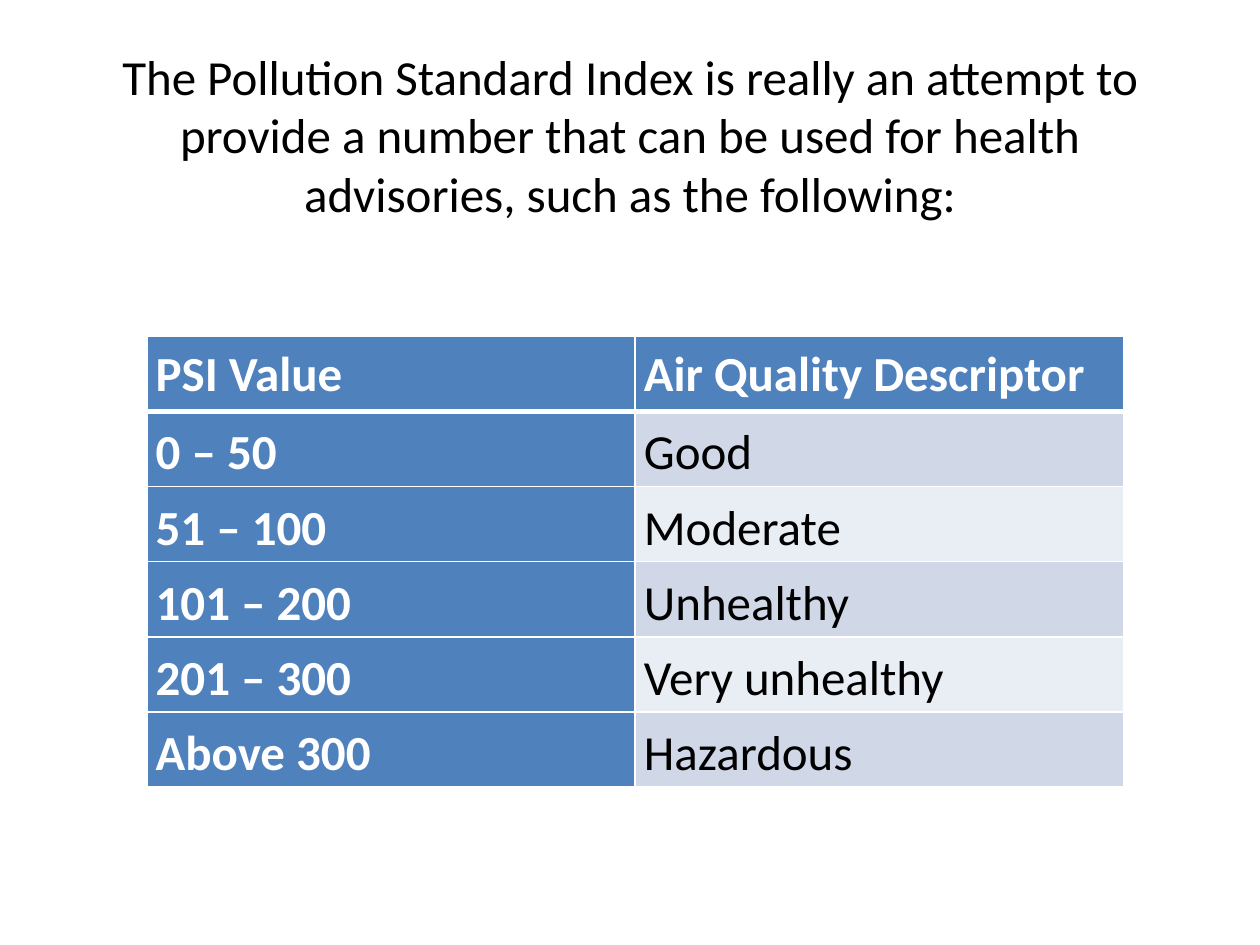
import pptx
import pptx.util
import pptx.dml.color
import pptx.enum.text
import pptx.oxml.ns
from lxml import etree

Pt = pptx.util.Pt
Align = pptx.enum.text.PP_ALIGN
Anchor = pptx.enum.text.MSO_ANCHOR

title = ("The Pollution Standard Index is really an attempt to provide a number "
         "that can be used for health advisories, such as the following:")
rows = [
    ("PSI Value", "Air Quality Descriptor"),
    ("0 – 50", "Good"),
    ("51 – 100", "Moderate"),
    ("101 – 200", "Unhealthy"),
    ("201 – 300", "Very unhealthy"),
    ("Above 300", "Hazardous"),
]
hues = {"head": "4F81BD", "odd": "D0D8E8", "even": "E9EDF4",
        "light": "FFFFFF", "dark": "000000"}
area = {"left": 36, "top": 48, "width": 648, "height": 90}
inset = {"margin_left": 5, "margin_right": 5, "margin_top": 0, "margin_bottom": 0}
left, top, wide, high = 84, 192, 558, 43


def paint(name):
    return pptx.dml.color.RGBColor.from_string(hues[name])


def apply(item, form):
    for key, value in form.items():
        setattr(item, key, value)


def write(frame, text, hue, bold, form):
    frame.text = text
    para = frame.paragraphs[0]
    apply(para, form)
    font = para.runs[0].font
    apply(font, {"name": "Calibri", "size": Pt(28), "bold": bold})
    font.color.rgb = paint(hue)


def edge(cell, side, width):
    qn = pptx.oxml.ns.qn
    props = cell._tc.get_or_add_tcPr()
    line = etree.SubElement(props, qn("a:ln" + side), w=str(Pt(width)))
    fill = etree.SubElement(line, qn("a:solidFill"))
    etree.SubElement(fill, qn("a:srgbClr"), val=hues["light"])


deck = pptx.Presentation()
apply(deck, {"slide_width": Pt(720), "slide_height": Pt(540)})
slide = deck.slides.add_slide(deck.slide_layouts[5])

head = slide.shapes.title
apply(head, {key: Pt(size) for key, size in area.items()})
apply(head.text_frame, {"word_wrap": True, "vertical_anchor": Anchor.MIDDLE,
                        "margin_bottom": Pt(36),
                        "auto_size": pptx.enum.text.MSO_AUTO_SIZE.NONE})
write(head.text_frame, title, "dark", False, {"alignment": Align.CENTER})

count = len(rows)
table = slide.shapes.add_table(count, 2, Pt(left), Pt(top),
                               Pt(wide), Pt(high * count)).table
for col in table.columns:
    col.width = Pt(wide / 2)
for r, row in enumerate(rows):
    table.rows[r].height = Pt(high)
    for c, text in enumerate(row):
        cell = table.cell(r, c)
        strong = r == 0 or c == 0
        apply(cell, {key: Pt(size) for key, size in inset.items()})
        cell.vertical_anchor = Anchor.MIDDLE if r else Anchor.TOP
        for side in "LRTB":
            thick = (r, side) in ((0, "B"), (1, "T"))
            edge(cell, side, 3 if thick else 1)
        cell.fill.solid()
        band = "odd" if r % 2 else "even"
        cell.fill.fore_color.rgb = paint("head" if strong else band)
        write(cell.text_frame, text, "light" if strong else "dark", strong,
              {"alignment": Align.JUSTIFY, "line_spacing": 1.15})

deck.save("out.pptx")
